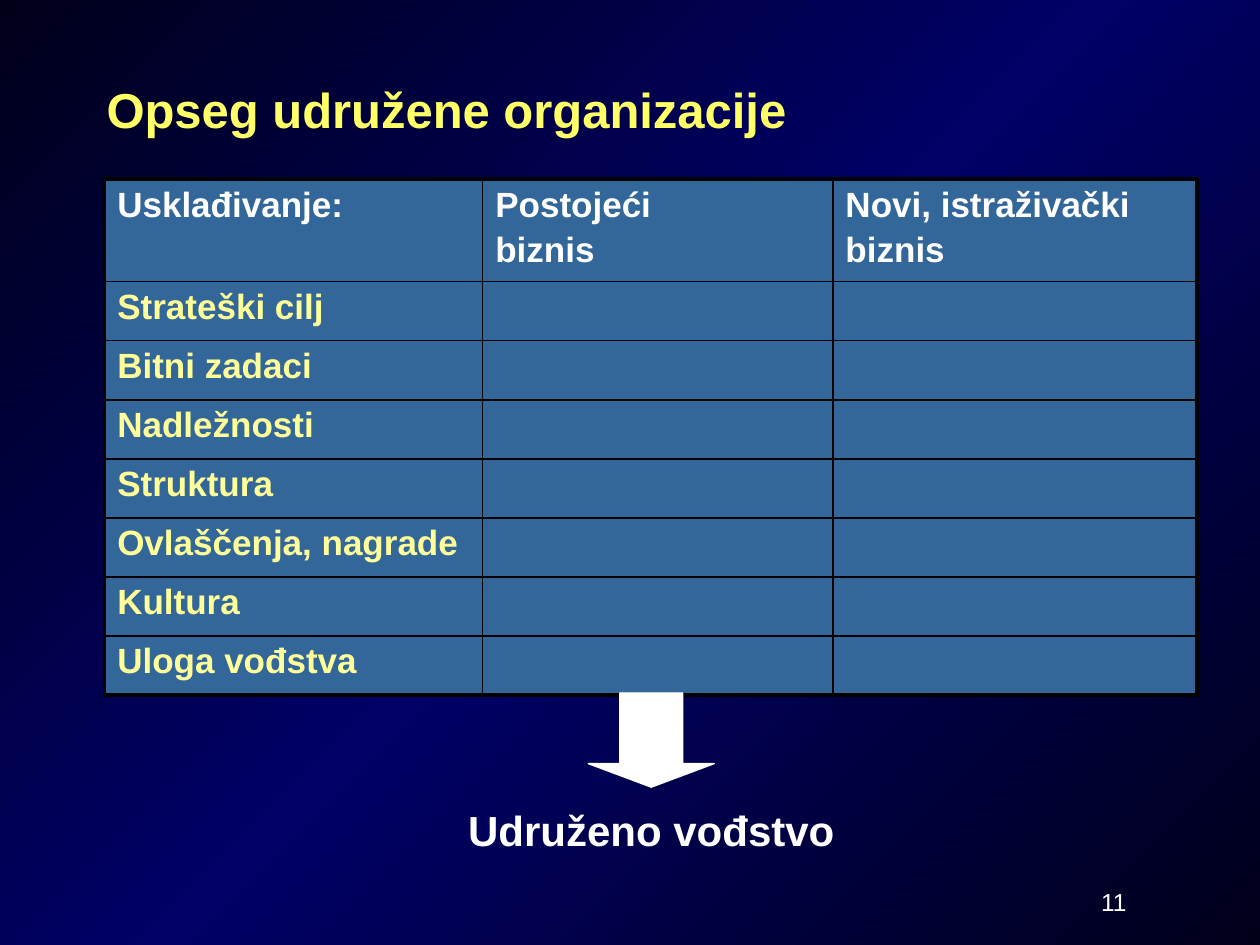
import copy

import lxml.etree
import pptx
import pptx.dml.color
import pptx.enum.shapes
import pptx.enum.text
import pptx.oxml.ns
import pptx.util

Cm = pptx.util.Cm
Pt = pptx.util.Pt
qn = pptx.oxml.ns.qn
ALIGN = pptx.enum.text.PP_ALIGN
ANCHOR = pptx.enum.text.MSO_ANCHOR

COLOURS = {
    "edge": "00001A",
    "middle": "000066",
    "title": "FFFF66",
    "label": "FFFF99",
    "white": "FFFFFF",
    "cell": "336699",
    "border": "000000",
}
HEADINGS = ["Usklađivanje:", "Postojeći\nbiznis", "Novi, istraživački\nbiznis"]
TOPICS = [
    "Strateški cilj", "Bitni zadaci", "Nadležnosti", "Struktura",
    "Ovlaščenja, nagrade", "Kultura", "Uloga vođstva",
]
COLUMN_WIDTHS = [7.62, 7.06, 7.34]
HEADER_HEIGHT, TOPIC_HEIGHT = 1.95, 1.19
OUTER_WIDTH, INNER_WIDTH = 2.25, 1


def rgb(name):
    return pptx.dml.color.RGBColor.from_string(COLOURS[name])


def write(frame, text, size, colour, bold=True, align=ALIGN.LEFT, gap=0):
    """Fill a text frame with one paragraph per line of text."""
    frame.text = text
    font_format = {"name": "Arial", "size": Pt(size), "bold": bold}
    for paragraph in frame.paragraphs:
        paragraph.alignment = align
        paragraph.space_before = Pt(gap)
        font = paragraph.runs[0].font
        for attribute, value in font_format.items():
            setattr(font, attribute, value)
        font.color.rgb = rgb(colour)


def add_text(slide, box, text, size, colour, anchor=ANCHOR.TOP, **style):
    frame = slide.shapes.add_textbox(*map(Cm, box)).text_frame
    frame.word_wrap = True
    frame.vertical_anchor = anchor
    write(frame, text, size, colour, **style)


def paint_background(slide):
    """Diagonal gradient, dark in two corners and blue between them."""
    fill = slide.background.fill
    fill.gradient()
    fill.gradient_angle = 315
    start, end = fill.gradient_stops
    for stop, position in ((start, 0), (end, 1)):
        stop.color.rgb = rgb("edge")
        stop.position = position
    stop_list = slide.background._cSld.find(".//" + qn("a:gsLst"))
    middle = copy.deepcopy(stop_list[0])
    middle.set("pos", "50000")
    middle.find(qn("a:srgbClr")).set("val", COLOURS["middle"])
    stop_list.insert(1, middle)


def set_borders(cell, widths):
    properties = cell._tc.get_or_add_tcPr()
    for side, width in widths.items():
        line = lxml.etree.SubElement(properties, qn("a:ln" + side), w=str(Pt(width)))
        solid = lxml.etree.SubElement(line, qn("a:solidFill"))
        lxml.etree.SubElement(solid, qn("a:srgbClr"), val=COLOURS["border"])


def add_alignment_table(slide, left, top):
    rows = [HEADINGS] + [[topic, "", ""] for topic in TOPICS]
    heights = [HEADER_HEIGHT] + [TOPIC_HEIGHT] * len(TOPICS)
    size = sum(COLUMN_WIDTHS), sum(heights)
    table = slide.shapes.add_table(
        len(rows), len(COLUMN_WIDTHS), *map(Cm, (left, top, *size))).table
    for column, width in zip(table.columns, COLUMN_WIDTHS):
        column.width = Cm(width)
    for row, height in zip(table.rows, heights):
        row.height = Cm(height)

    last_row, last_column = len(rows) - 1, len(COLUMN_WIDTHS) - 1
    for r, texts in enumerate(rows):
        for c, text in enumerate(texts):
            cell = table.cell(r, c)
            outer = {"L": c == 0, "R": c == last_column,
                     "T": r == 0, "B": r == last_row}
            set_borders(cell, {side: OUTER_WIDTH if is_outer else INNER_WIDTH
                               for side, is_outer in outer.items()})
            cell.fill.solid()
            cell.fill.fore_color.rgb = rgb("cell")
            if text:
                write(cell.text_frame, text, 20, "label" if r else "white", gap=3.4)


def add_down_arrow(slide, box):
    arrow = slide.shapes.add_shape(
        pptx.enum.shapes.MSO_SHAPE.DOWN_ARROW, *map(Cm, box))
    arrow.adjustments[0], arrow.adjustments[1] = 0.5, 0.25
    arrow.shadow.inherit = False
    arrow.fill.solid()
    arrow.fill.fore_color.rgb = rgb("white")
    arrow.line.color.rgb = rgb("white")
    arrow.line.width = Pt(0.75)


def main():
    deck = pptx.Presentation()
    deck.slide_width, deck.slide_height = Cm(25.4), Cm(19.05)
    slide = deck.slides.add_slide(deck.slide_layouts[6])
    paint_background(slide)
    add_text(slide, (19.96, 17.48, 3, 1.4), "11", 14, "white",
             anchor=ANCHOR.MIDDLE, bold=False, align=ALIGN.RIGHT)
    add_text(slide, (1.9, 1.47, 22.12, 2.16), "Opseg udružene organizacije",
             28, "title")
    add_alignment_table(slide, 2.11, 3.61)
    add_text(slide, (6.88, 16.1, 12.5, 1.3), "Udruženo vođstvo", 24, "white",
             align=ALIGN.CENTER)
    add_down_arrow(slide, (11.86, 13.97, 2.54, 1.9))
    deck.save("out.pptx")


if __name__ == "__main__":
    main()
